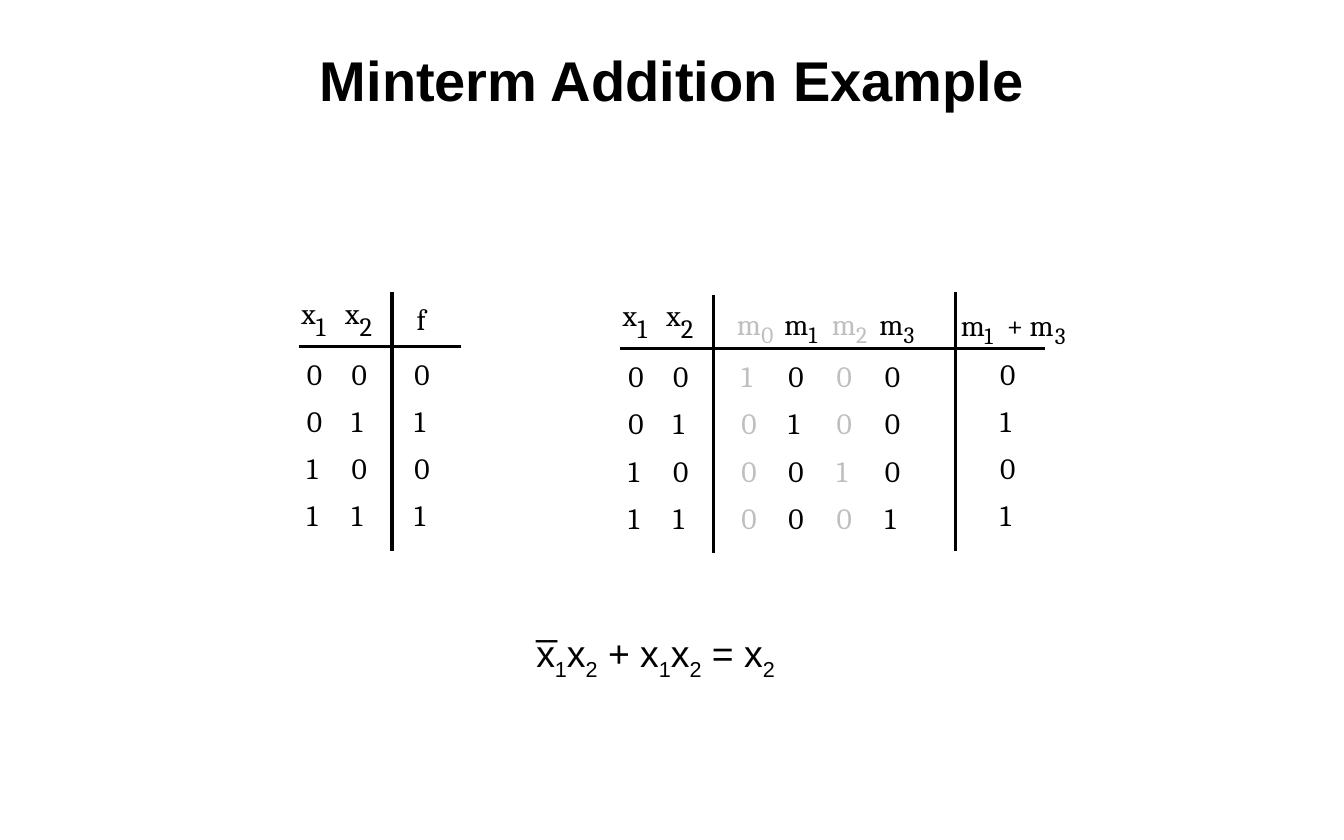
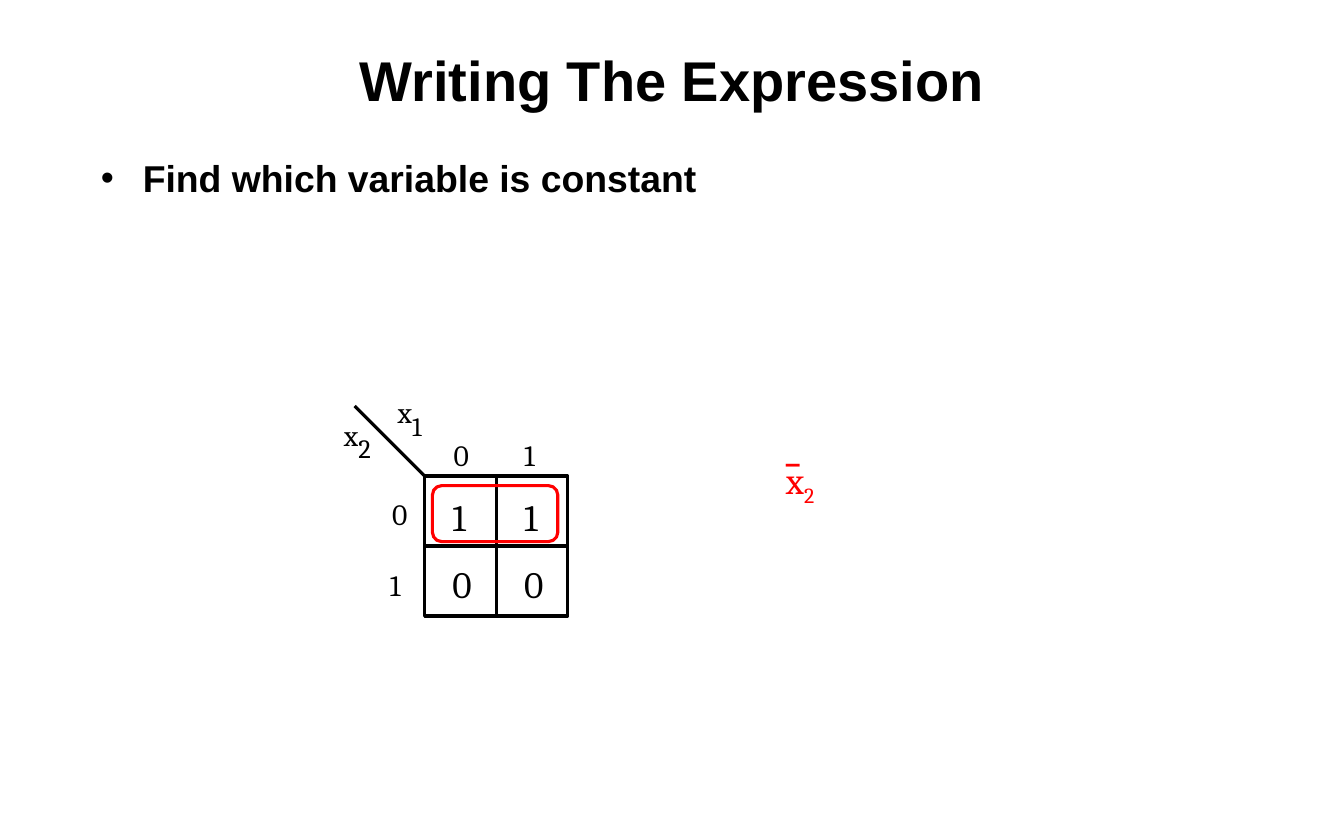
from lxml.etree import SubElement
from pptx import Presentation
from pptx.dml.color import RGBColor as Rgb
from pptx.enum.shapes import MSO_CONNECTOR as Link, MSO_SHAPE as Kind
from pptx.enum.text import MSO_ANCHOR as Anchor, MSO_AUTO_SIZE as Fit, PP_ALIGN as Align
from pptx.oxml.ns import qn
from pptx.util import Pt

tint = {"ink": "000000", "dim": "BFBFBF", "mark": "FF0000", "page": "FFFFFF"}
hue = {name: Rgb.from_string(code) for name, code in tint.items()}


def note(shapes, text, x, y, size=19, color="ink", font="Cambria", wide=None, pad=False, wrap=False):
    high = size * 1.21 + (7.2 if pad else 0)
    box = shapes.add_textbox(Pt(x), Pt(y), Pt(wide or size * 0.75), Pt(high))
    frame = box.text_frame
    frame.word_wrap = wrap
    frame.auto_size = Fit.SHAPE_TO_FIT_TEXT
    if not pad:
        frame.margin_left = frame.margin_right = frame.margin_top = frame.margin_bottom = 0
    para = frame.paragraphs[0]
    para.font.size = Pt(size)
    para.font.name = font
    para.font.color.rgb = hue[color]
    for i, part in enumerate(text.split("|")):
        run = para.add_run()
        run.text = part
        if i % 2:
            run._r.get_or_add_rPr().set("baseline", "-25000")
    return para


def rule(page, x1, y1, x2, y2):
    line = page.shapes.add_connector(Link.STRAIGHT, Pt(x1), Pt(y1), Pt(x2), Pt(y2))
    line.line.color.rgb = hue["ink"]
    line.line.width = Pt(2)
    SubElement(line._element.spPr, qn("a:effectLst"))
    return line


deck = Presentation()
deck.slide_width, deck.slide_height = Pt(864), Pt(540)

pages = []
for head, layout in (("Minterm Addition Example", 5), ("Writing The Expression", 1)):
    page = deck.slides.add_slide(deck.slide_layouts[layout])
    title = page.shapes.title
    title.left, title.top, title.width, title.height = 0, Pt(24), Pt(864), Pt(54)
    title.text_frame.text = head
    title.text_frame.vertical_anchor = Anchor.MIDDLE
    para = title.text_frame.paragraphs[0]
    para.alignment = Align.CENTER
    para.font.name, para.font.size, para.font.bold = "Arial", Pt(36), True
    para.font.color.rgb = hue["ink"]
    pages.append(page)
sums, card = pages

for dx, dy, end in ((0, 0, 296.6), (206.6, 1.44, 671.8)):
    rule(sums, end, 222.5 + dy, 192.2 + dx, 222.5 + dy)
    rule(sums, 252 + dx, 354.2 + dy, 252 + dx, 188 + dy)
    for x, sub in ((193.7, "1"), (221.8, "2")):
        note(sums.shapes, "x", x + dx, 189.4 + dy)
        note(sums.shapes, sub, x + dx + 9.4, 199.4 + dy, 17)
rule(sums, 614.2, 354.2, 614.2, 188)

columns = (
    (197.3, 229, "0011", "ink"), (226.1, 229, "0101", "ink"), (266.4, 229, "0101", "ink"),
    (403.9, 230.4, "0011", "ink"), (432.7, 230.4, "0101", "ink"),
    (476.6, 230.4, "1000", "dim"), (506.9, 230.4, "0100", "ink"),
    (537.8, 230.4, "0010", "dim"), (568.8, 230.4, "0001", "ink"),
    (643, 229, "0101", "ink"),
)
for x, top, bits, color in columns:
    for row, bit in enumerate(bits):
        note(sums.shapes, bit, x, top + row * 30.24, color=color)

note(sums.shapes, "f", 267.8, 193.7)
for i in range(4):
    color = "ink" if i % 2 else "dim"
    x = 473.8 + i * 30.5
    note(sums.shapes, "m", x, 196.6, color=color, wide=19.5)
    note(sums.shapes, str(i), x + 15.6, 205.9, 15, color)
note(sums.shapes, "m", 617.8, 197.3, wide=19.5)
note(sums.shapes, "+ m", 647.3, 197.3, wide=35.3)
for x, sub in ((632.9, "1"), (678.2, "3")):
    note(sums.shapes, sub, x, 206.6, 15)
formula = "x|1|x|2| + x|1|x|2| = x|2"
note(sums.shapes, formula, 337.7, 401.8, 24, font="Arial", wide=196, pad=True, wrap=True)
note(sums.shapes, "_", 337.7, 380.9, 24, font="Arial", wide=51, pad=True, wrap=True)

body = card.placeholders[1]
body.left, body.top, body.width, body.height = Pt(57.6), Pt(96), Pt(748.8), Pt(390)
body.text_frame.text = "Find which variable is constant"
para = body.text_frame.paragraphs[0]
para.font.name, para.font.size, para.font.bold = "Arial", Pt(24), True
para.font.color.rgb = hue["ink"]

grid = card.shapes.add_shape(Kind.RECTANGLE, Pt(273), Pt(306), Pt(92), Pt(90))
grid.fill.solid()
grid.fill.fore_color.rgb = hue["page"]
across = rule(card, 365, 351, 273, 351)
across.begin_connect(grid, 3)
across.end_connect(grid, 1)
down = rule(card, 319, 396, 319, 306)
down.begin_connect(grid, 2)
down.end_connect(grid, 0)
rule(card, 228, 261, 273, 306)

for x, y, sub in ((221, 267.8, "2"), (255.6, 253.4, "1")):
    group = card.shapes.add_group_shape()
    note(group.shapes, "x", x, y)
    note(group.shapes, sub, x + 9.4, y + 10, 17)
for text, x, y in (("0", 252, 319), ("1", 250.6, 364.3), ("0", 291.6, 280.8), ("1", 337, 280.8)):
    note(card.shapes, text, x, y)
for y, bit in ((317.5, "1"), (360.7, "0")):
    for x in (290.9, 337):
        note(card.shapes, bit, x, y, 24)

loop = card.shapes.add_shape(Kind.ROUNDED_RECTANGLE, Pt(278), Pt(312.2), Pt(80.6), Pt(36))
loop.fill.background()
for shape, color in ((grid, "ink"), (loop, "mark")):
    shape.shadow.inherit = False
    shape.line.color.rgb = hue[color]
    shape.line.width = Pt(2)

group = card.shapes.add_group_shape()
note(group.shapes, "x|2", 498.2, 290.2, 24, "mark", wide=168, pad=True, wrap=True)
bar = note(group.shapes, "_", 498.2, 270, 24, "mark", wide=26.6, pad=True)
bar.font.bold = True

deck.save("out.pptx")
